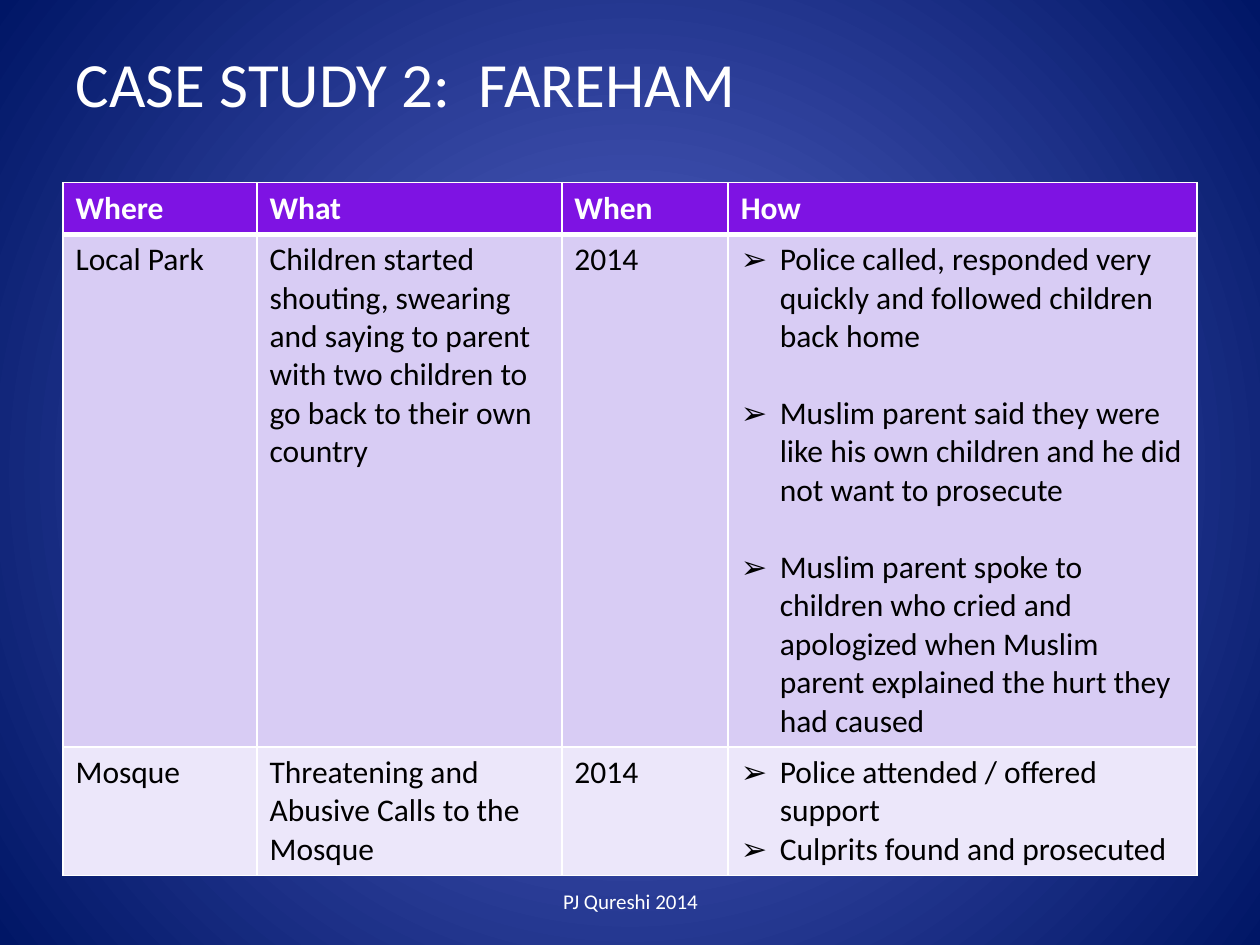
from dataclasses import dataclass

from lxml.etree import SubElement
from pptx import Presentation
from pptx.dml.color import RGBColor
from pptx.enum.text import MSO_ANCHOR, PP_ALIGN
from pptx.oxml import parse_xml
from pptx.oxml.ns import nsdecls, qn
from pptx.util import Inches, Pt

WHITE = RGBColor(0xFF, 0xFF, 0xFF)
BLACK = RGBColor(0x00, 0x00, 0x00)
GLOW_BLUE = RGBColor(0x5B, 0x69, 0xCE)
NAVY = RGBColor(0x00, 0x16, 0x66)
PURPLE = RGBColor(0x7E, 0x13, 0xE3)
LILAC = RGBColor(0xD8, 0xCC, 0xF4)
PALE_LILAC = RGBColor(0xEC, 0xE7, 0xFA)
FONT = "Calibri"

HEADINGS = ["Where", "What", "When", "How"]
COLUMN_WIDTHS = [1.54, 2.42, 1.32, 3.72]
HEADER_HEIGHT = 0.41


@dataclass
class Incident:
    where: str
    what: str
    when: str
    responses: list[str]
    fill: RGBColor
    height: float
    response_gap: float = 0


INCIDENTS = [
    Incident(
        "Local Park",
        "Children started shouting, swearing and saying to parent with two "
        "children to go back to their own country",
        "2014",
        [
            "Police called, responded very quickly and followed children back home",
            "Muslim parent said they were like his own children and he did not "
            "want to prosecute",
            "Muslim parent spoke to children who cried and apologized when "
            "Muslim parent explained the hurt they had caused",
        ],
        LILAC, 4.05, response_gap=22,
    ),
    Incident(
        "Mosque",
        "Threatening and Abusive Calls to the Mosque",
        "2014",
        ["Police attended / offered support", "Culprits found and prosecuted"],
        PALE_LILAC, 1.02,
    ),
]


def format_text(frame, size: float, color: RGBColor, bold: bool = False) -> None:
    for paragraph in frame.paragraphs:
        for run in paragraph.runs:
            run.font.name = FONT
            run.font.size = Pt(size)
            run.font.bold = bold
            run.font.color.rgb = color


def add_bullet(paragraph) -> None:
    properties = paragraph._p.get_or_add_pPr()
    properties.set("marL", str(Inches(0.31)))
    properties.set("indent", str(-Inches(0.31)))
    SubElement(properties, qn("a:buFont")).set("typeface", "Wingdings 2")
    properties[-1].set("typeface", "Arial")
    SubElement(properties, qn("a:buChar")).set("char", "➢")


def set_borders(cell, top: float = 1, bottom: float = 1) -> None:
    widths = {"lnL": 1, "lnR": 1, "lnT": top, "lnB": bottom}
    for position, (side, width) in enumerate(widths.items()):
        border = parse_xml(
            f'<a:{side} {nsdecls("a")} w="{Pt(width)}"><a:solidFill>'
            f'<a:srgbClr val="{WHITE}"/></a:solidFill></a:{side}>'
        )
        cell._tc.get_or_add_tcPr().insert(position, border)


def fill_cell(cell, text: str, fill: RGBColor, color: RGBColor, bold: bool = False) -> None:
    cell.text_frame.text = text
    format_text(cell.text_frame, 18, color, bold)
    cell.fill.solid()
    cell.fill.fore_color.rgb = fill


def set_radial_background(slide) -> None:
    fill = slide.background.fill
    fill.gradient()
    for stop, color in zip(fill.gradient_stops, (GLOW_BLUE, NAVY)):
        stop.color.rgb = color
    gradient = next(slide.element.iter(qn("a:gradFill")))
    gradient.remove(gradient.find(qn("a:lin")))
    circle = SubElement(gradient, qn("a:path"), {"path": "circle"})
    SubElement(circle, qn("a:fillToRect"), dict.fromkeys("ltrb", "50000"))


def add_incident_table(slide) -> None:
    table = slide.shapes.add_table(
        len(INCIDENTS) + 1, len(HEADINGS),
        Inches(0.5), Inches(1.45), Inches(9), Inches(5.48),
    ).table
    for column, width in zip(table.columns, COLUMN_WIDTHS):
        column.width = Inches(width)

    # Header row with a heavier rule below
    table.rows[0].height = Inches(HEADER_HEIGHT)
    for cell, heading in zip(table.rows[0].cells, HEADINGS):
        fill_cell(cell, heading, PURPLE, WHITE, bold=True)
        set_borders(cell, bottom=3)

    # One row for each incident
    for number, incident in enumerate(INCIDENTS, start=1):
        row = table.rows[number]
        row.height = Inches(incident.height)
        texts = [incident.where, incident.what, incident.when,
                 "\n".join(incident.responses)]
        for cell, text in zip(row.cells, texts):
            fill_cell(cell, text, incident.fill, BLACK)
            set_borders(cell, top=3 if number == 1 else 1)
        responses = table.cell(number, len(HEADINGS) - 1).text_frame.paragraphs
        for index, response in enumerate(responses):
            if index and incident.response_gap:
                response.space_before = Pt(incident.response_gap)
            add_bullet(response)


def add_title(slide) -> None:
    title = slide.shapes.title
    title.left, title.top = Inches(0.5), Inches(0.3)
    title.width, title.height = Inches(9), Inches(1.25)
    frame = title.text_frame
    frame.text = "CASE STUDY 2:  FAREHAM"
    frame.vertical_anchor = MSO_ANCHOR.MIDDLE
    frame.margin_bottom = Inches(0.6)
    frame.paragraphs[0].alignment = PP_ALIGN.LEFT
    format_text(frame, 36, WHITE)


def add_footer(slide) -> None:
    footer = slide.shapes.add_textbox(
        Inches(3.42), Inches(6.95), Inches(3.17), Inches(0.4)
    ).text_frame
    footer.word_wrap = True
    footer.text = "PJ Qureshi 2014"
    footer.vertical_anchor = MSO_ANCHOR.MIDDLE
    footer.paragraphs[0].alignment = PP_ALIGN.CENTER
    format_text(footer, 12, WHITE)


def main() -> None:
    presentation = Presentation()
    presentation.slide_width, presentation.slide_height = Inches(10), Inches(7.5)
    slide = presentation.slides.add_slide(presentation.slide_layouts[5])
    set_radial_background(slide)
    add_title(slide)
    add_incident_table(slide)
    add_footer(slide)
    presentation.save("out.pptx")


if __name__ == "__main__":
    main()
